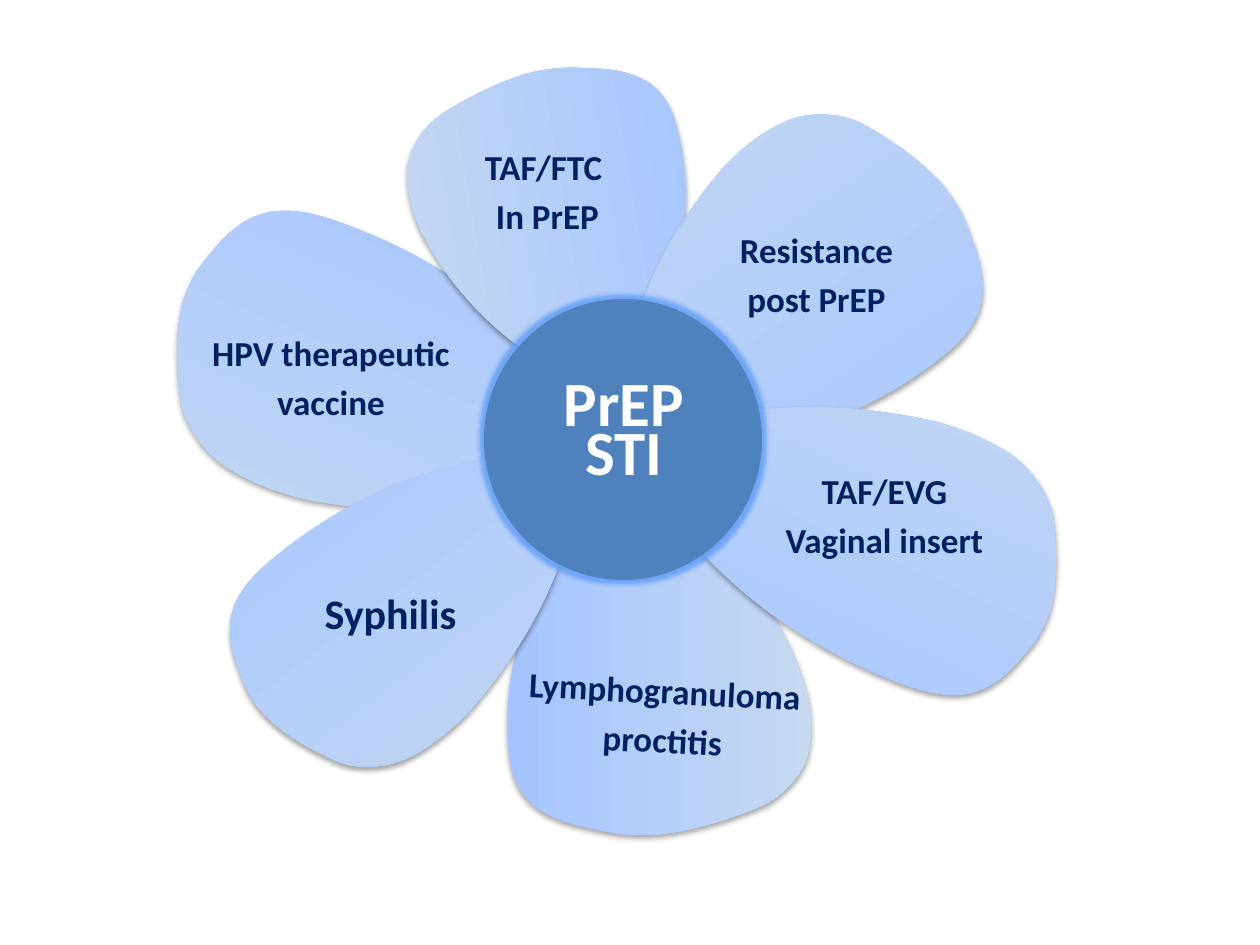
from dataclasses import dataclass

from lxml import etree
from pptx import Presentation
from pptx.dml.color import RGBColor
from pptx.enum import shapes, text
from pptx.oxml import ns
from pptx.util import Emu, Pt

PX_PER_INCH = 126


@dataclass(frozen=True)
class Theme:
    font: str = "Calibri"
    petal_dark: str = "A4C4FF"
    petal_light: str = "C6D9F1"
    hub: str = "4F81BD"
    glow: str = "5E9BF5"
    shadow: str = "000000"
    label: str = "002060"
    hub_label: str = "FFFFFF"
    small: int = 20
    medium: int = 24
    large: int = 36
    line_height: int = 28


THEME = Theme()

# Petal outline on a 1000 x 1000 grid: start, then (control, control, end)
PETAL_START = (1000, 540)
PETAL_CURVES = [
    ((1000, 633), (989, 665), (979, 726)),
    ((947, 895), (887, 964), (761, 976)),
    ((521, 1000), (303, 907), (109, 714)),
    ((0, 601), (11, 532), (95, 415)),
    ((232, 222), (398, 93), (588, 24)),
    ((651, 4), (725, 0), (785, 20)),
    ((838, 40), (894, 101), (919, 165)),
    ((961, 278), (1000, 431), PETAL_START),
]

# Left, top, width, height in px, and rotation in degrees
PETALS = [
    ((164, 252, 469, 281), 202.9),
    ((478, 500, 358, 312), 90),
    ((393, 93, 330, 284), 260.4),
    ((223, 467, 411, 251), 143.6),
    ((568, 155, 412, 294), 325.7),
    ((616, 387, 454, 265), 24.1),
]
HUB = (484, 299, 278, 281)

# Box in px, lines, type size, colour, rotation
LABELS = [
    ((472, 132, 151, 108), ["TAF/FTC ", "In PrEP"], THEME.small, THEME.label, 0),
    ((551, 384, 146, 116), ["PrEP", "STI"], THEME.large, THEME.hub_label, 0),
    ((514, 656, 300, 108), ["Lymphogranuloma", "proctitis"], THEME.small, THEME.label, 2.9),
    ((198, 318, 266, 111), ["HPV therapeutic", "vaccine"], THEME.small, THEME.label, 0),
    ((311, 583, 159, 62), ["Syphilis"], THEME.medium, THEME.label, 0),
    ((726, 215, 181, 111), ["Resistance", "post PrEP"], THEME.small, THEME.label, 0),
    ((771, 456, 227, 111), ["TAF/EVG", "Vaginal insert"], THEME.small, THEME.label, 0),
]


def px(length):
    return Emu(round(length * 914400 / PX_PER_INCH))


def rgb(colour):
    return RGBColor.from_string(colour)


def add_element(parent, tag, **attributes):
    element = etree.SubElement(parent, ns.qn(tag))
    for name, value in attributes.items():
        element.set(name, str(value))
    return element


def set_effect(shape, tag, colour, alpha, **attributes):
    shape.shadow.inherit = False
    effects = shape._element.spPr.find(ns.qn("a:effectLst"))
    effect = add_element(effects, tag, **attributes)
    tint = add_element(effect, "a:srgbClr", val=colour)
    add_element(tint, "a:alpha", val=alpha * 1000)


def add_petal(slide, box, rotation):
    # Anchor points first, then the path is redrawn with its curves
    builder = slide.shapes.build_freeform(*PETAL_START)
    builder.add_line_segments([curve[-1] for curve in PETAL_CURVES])
    petal = builder.convert_to_shape()
    outline = petal._element.spPr.find(".//" + ns.qn("a:path"))
    outline.clear()
    outline.set("w", "1000")
    outline.set("h", "1000")
    for tag, points in [("a:moveTo", [PETAL_START])] + [
            ("a:cubicBezTo", curve) for curve in PETAL_CURVES]:
        step = add_element(outline, tag)
        for x, y in points:
            add_element(step, "a:pt", x=x, y=y)
    add_element(outline, "a:close")

    petal.left, petal.top, petal.width, petal.height = map(px, box)
    petal.rotation = rotation
    petal.line.fill.background()
    petal.fill.gradient()
    petal.fill.gradient_angle = 90
    colours = (THEME.petal_dark, THEME.petal_light)
    for stop, colour in zip(petal.fill.gradient_stops, colours):
        stop.color.rgb = rgb(colour)
    set_effect(petal, "a:outerShdw", THEME.shadow, 35, blurRad=Pt(3.1),
               dist=Pt(1.8), dir=5400000, rotWithShape=0)


def add_hub(slide, box):
    hub = slide.shapes.add_shape(shapes.MSO_SHAPE.OVAL, *map(px, box))
    hub.fill.solid()
    hub.fill.fore_color.rgb = rgb(THEME.hub)
    hub.line.fill.background()
    set_effect(hub, "a:glow", THEME.glow, 80, rad=Pt(5))


def add_label(slide, box, lines, size, colour, rotation):
    label = slide.shapes.add_textbox(*map(px, box))
    label.rotation = rotation
    frame = label.text_frame
    frame.word_wrap = False
    frame.auto_size = text.MSO_AUTO_SIZE.SHAPE_TO_FIT_TEXT
    for index, line in enumerate(lines):
        paragraph = frame.add_paragraph() if index else frame.paragraphs[0]
        paragraph.alignment = text.PP_ALIGN.CENTER
        paragraph.line_spacing = Pt(THEME.line_height)
        run = paragraph.add_run()
        run.text = line
        run.font.name = THEME.font
        run.font.size = Pt(size)
        run.font.bold = True
        run.font.color.rgb = rgb(colour)


def main():
    deck = Presentation()
    deck.slide_width, deck.slide_height = px(1260), px(945)
    slide = deck.slides.add_slide(deck.slide_layouts[6])

    # Flower: petals behind the hub
    for box, rotation in PETALS:
        add_petal(slide, box, rotation)
    add_hub(slide, HUB)

    # Topic labels
    for label in LABELS:
        add_label(slide, *label)

    deck.save("out.pptx")


if __name__ == "__main__":
    main()
